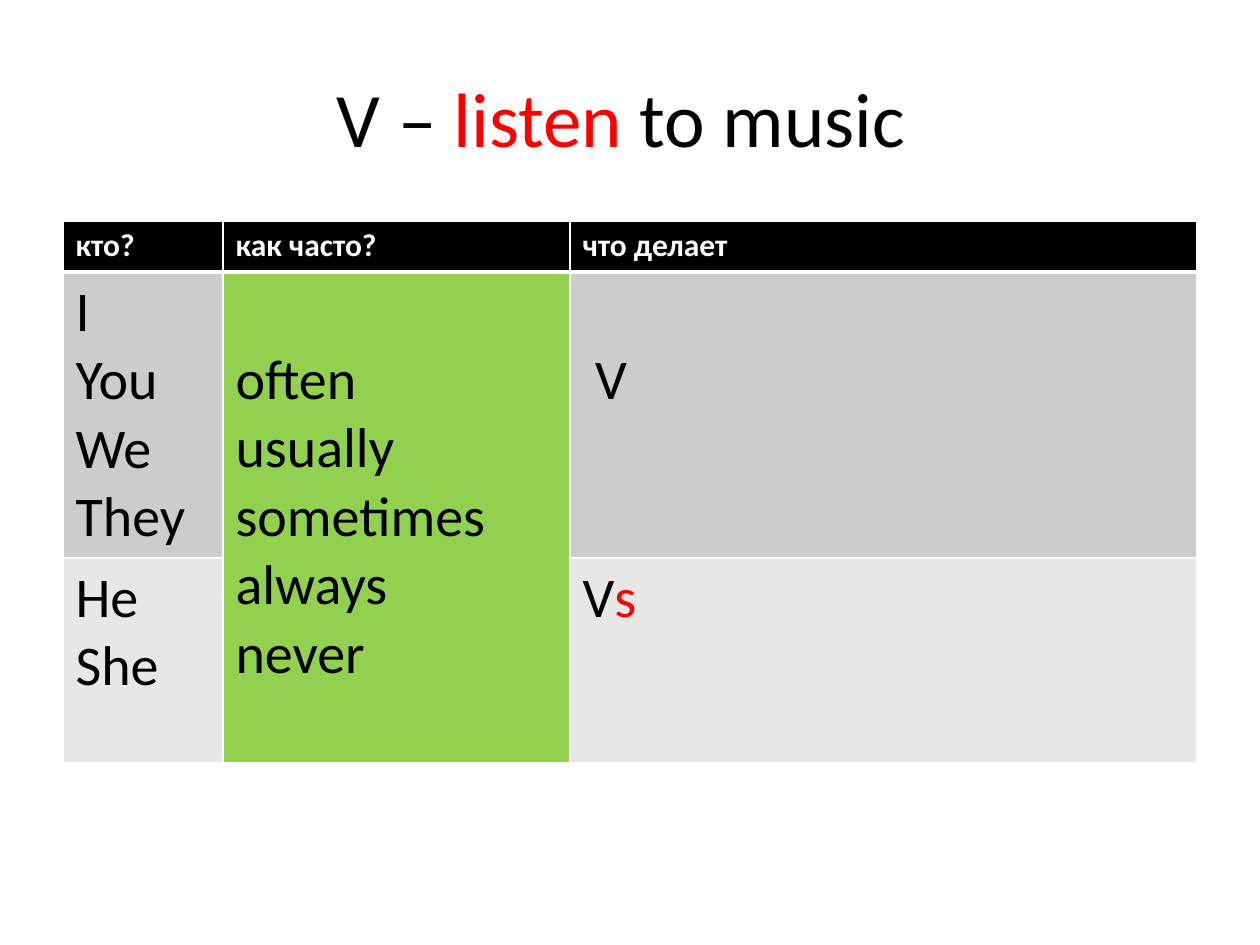
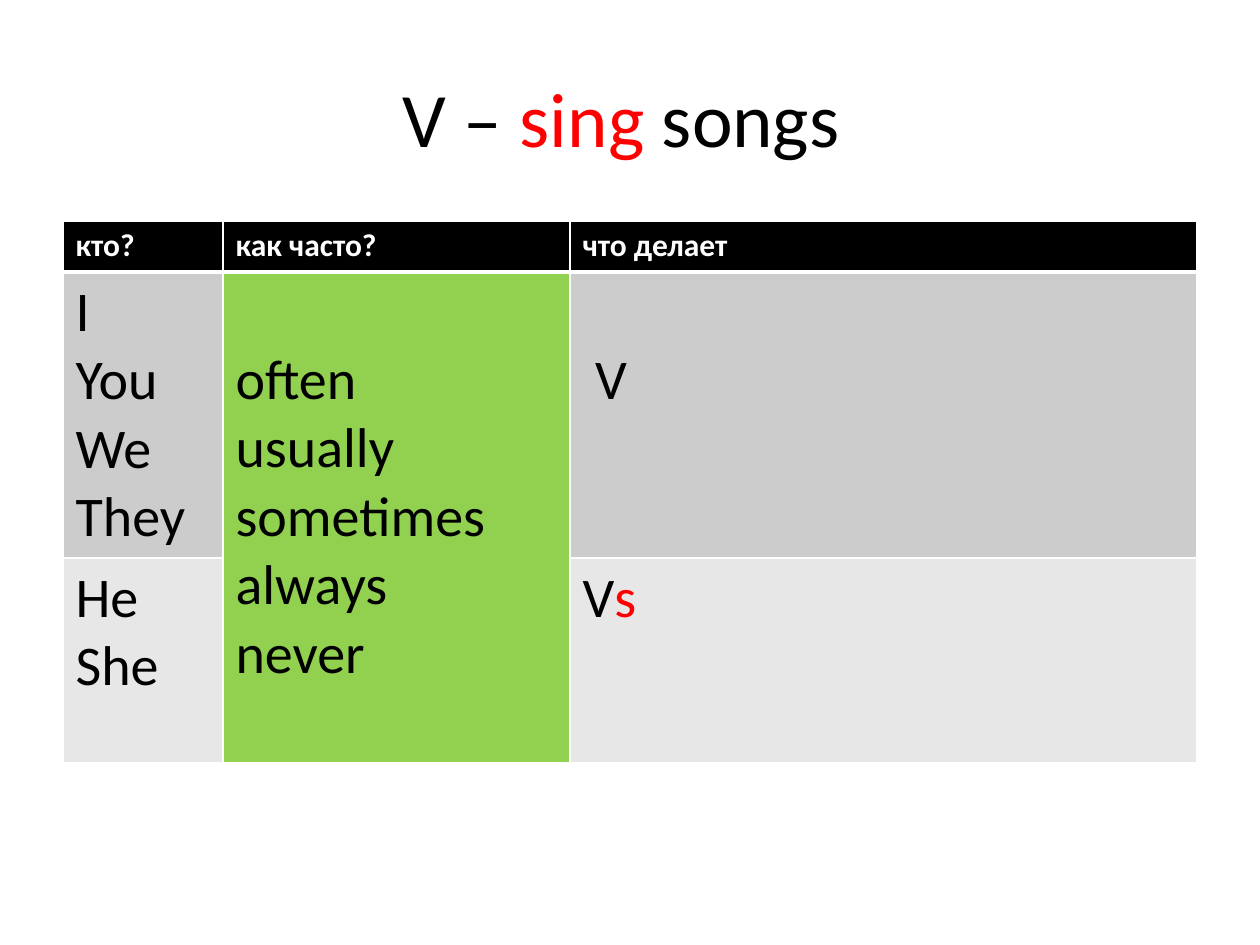
from lxml import etree
from pptx import Presentation
from pptx import util as u
from pptx.dml.color import RGBColor
from pptx.enum import text
from pptx.oxml.ns import qn

# Content: each text is a list of paragraphs, each paragraph a list of (words, colour)
BLACK, WHITE, RED = "000000", "FFFFFF", "FF0000"
GREEN, DARK_GREY, LIGHT_GREY = "92D050", "CCCCCC", "E7E7E7"

TITLES = [
    [("V –", BLACK), (" listen ", RED), ("to music ", BLACK)],
    [("V –", BLACK), (" sing ", RED), ("songs ", BLACK)],
]
HEADINGS = ["кто?", "как часто?", "что делает"]
PLURAL_SUBJECTS = ["I", "You", "We", "They"]
SINGULAR_SUBJECTS = ["He", "She"]
ADVERBS = ["often", "usually", "sometimes", "always", "never"]


def plain(lines, color=BLACK):
    return [[(line, color)] for line in lines]


# (row, column, paragraphs, fill, lines left free above the text)
CELLS = [(0, c, plain([h], WHITE), BLACK, 0) for c, h in enumerate(HEADINGS)] + [
    (1, 0, plain(PLURAL_SUBJECTS), DARK_GREY, 0),
    (1, 1, plain(ADVERBS), GREEN, 1),
    (1, 2, plain([" V"]), DARK_GREY, 1),
    (2, 0, plain(SINGULAR_SUBJECTS), LIGHT_GREY, 0),
    (2, 2, [[("V", BLACK), ("s", RED)]], LIGHT_GREY, 0),
]

# Layout in px
PX = u.Inches(1) / 126
SLIDE_W, SLIDE_H = 1260, 945
LEFT, WIDTH = 63, 1134
TITLE_TOP, TITLE_H = 38, 157
TABLE_TOP = 221
COLUMNS = [160, 347, 627]
ROWS = [51, 286, 205]
CELL_PAD, LINE_H = 6, 68
FONT = "Calibri"


def px(n):
    return u.Emu(round(n * PX))


def rgb(color):
    return RGBColor.from_string(color)


def write(tf, paragraphs, size, bold=False, align=text.PP_ALIGN.LEFT):
    for i, runs in enumerate(paragraphs):
        p = tf.add_paragraph() if i else tf.paragraphs[0]
        p.alignment = align
        p.font.name, p.font.size, p.font.bold = FONT, u.Pt(size), bold
        for words, color in runs:
            r = p.add_run()
            r.text = words
            r.font.color.rgb = rgb(color)


def add_borders(cell, row):
    """White grid lines, with a thick one under the header row."""
    widths = {"L": 1, "R": 1, "T": 3 if row == 1 else 1, "B": 3 if row == 0 else 1}
    tc_pr = cell._tc.get_or_add_tcPr()
    for side, width in widths.items():
        ln = etree.SubElement(tc_pr, qn("a:ln" + side), w=str(u.Pt(width)))
        fill = etree.SubElement(ln, qn("a:solidFill"))
        etree.SubElement(fill, qn("a:srgbClr"), val=WHITE)


def add_title(s, runs):
    tf = s.shapes.add_textbox(px(LEFT), px(TITLE_TOP), px(WIDTH), px(TITLE_H)).text_frame
    tf.word_wrap = True
    tf.vertical_anchor = text.MSO_ANCHOR.MIDDLE
    write(tf, [runs], 44, align=text.PP_ALIGN.CENTER)


def add_grammar_table(s):
    table = s.shapes.add_table(len(ROWS), len(COLUMNS), px(LEFT), px(TABLE_TOP),
                               px(sum(COLUMNS)), px(sum(ROWS))).table
    table.horz_banding = False
    for column, width in zip(table.columns, COLUMNS):
        column.width = px(width)
    for row, height in zip(table.rows, ROWS):
        row.height = px(height)

    # Borders go in before the fills; the adverbs span both subject rows
    for r in range(len(ROWS)):
        for c in range(len(COLUMNS)):
            add_borders(table.cell(r, c), r)
    table.cell(1, 1).merge(table.cell(2, 1))

    for r, c, paragraphs, fill, free_lines in CELLS:
        cell = table.cell(r, c)
        cell.fill.solid()
        cell.fill.fore_color.rgb = rgb(fill)
        cell.margin_top = px(CELL_PAD + free_lines * LINE_H)
        write(cell.text_frame, paragraphs, 32 if r else 18, bold=r == 0)


def main():
    prs = Presentation()
    prs.slide_width, prs.slide_height = px(SLIDE_W), px(SLIDE_H)
    for title in TITLES:
        s = prs.slides.add_slide(prs.slide_layouts[6])
        add_title(s, title)
        add_grammar_table(s)
    prs.save("out.pptx")


if __name__ == "__main__":
    main()
